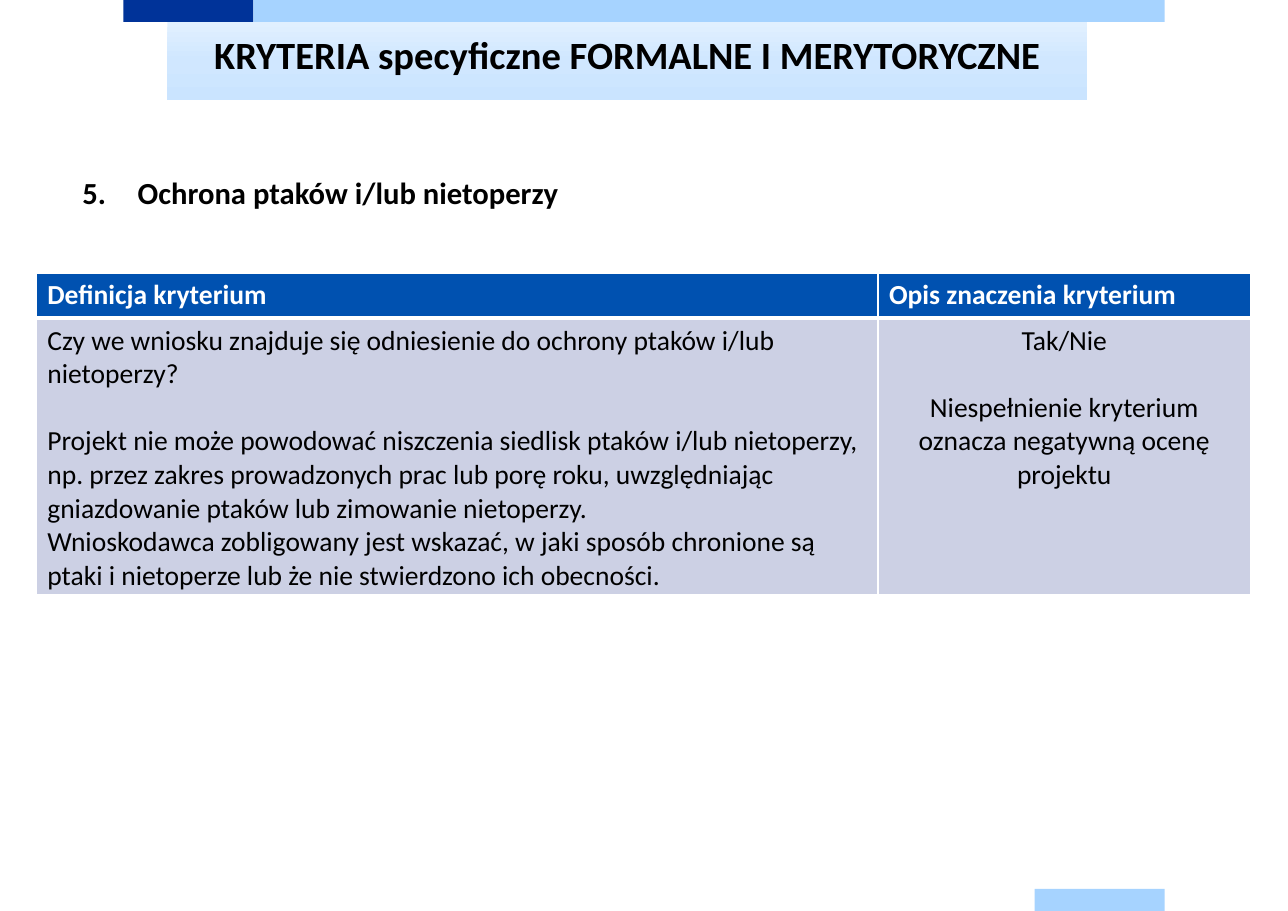
import copy

import pptx
import pptx.util
import pptx.dml.color
import pptx.enum.shapes
import pptx.enum.text
import pptx.oxml
import pptx.oxml.ns
from lxml import etree

Inches, Pt = pptx.util.Inches, pptx.util.Pt
qn = pptx.oxml.ns.qn
ALIGN = pptx.enum.text.PP_ALIGN
FONT = "Calibri"

BARS = [
    (1.12, 0, 1.18, 0.2, "003399"),
    (2.3, 0, 8.27, 0.2, "A6D3FF"),
    (9.39, 8.07, 1.18, 0.2, "A6D3FF"),
]
TITLE = "KRYTERIA specyficzne FORMALNE I MERYTORYCZNE"
TITLE_GRADIENT = [(0, "E1F0FF"), (0.5, "D0E7FF"), (1, "CAE4FF")]
HEADING = "Ochrona ptaków i/lub nietoperzy"
HEADING_NUMBER = 5

COLUMN_WIDTHS = [7.64, 3.38]
ROW_HEIGHTS = [0.41, 2.49]
ROW_STYLES = [
    {"fill": "0051B0", "color": "FFFFFF", "bold": True, "top": 1, "bottom": 3},
    {"fill": "CCD0E4", "color": "000000", "bold": False, "top": 3, "bottom": 1},
]
LINE_GAP = 22
# Each cell is a list of (text, space before in points)
TABLE = [
    [[("Definicja kryterium", 0)], [("Opis znaczenia kryterium", 0)]],
    [
        [
            ("Czy we wniosku znajduje się odniesienie do ochrony ptaków i/lub nietoperzy?", 0),
            ("Projekt nie może powodować niszczenia siedlisk ptaków i/lub nietoperzy, "
             "np. przez zakres prowadzonych prac lub porę roku, uwzględniając "
             "gniazdowanie ptaków lub zimowanie nietoperzy.", LINE_GAP),
            ("Wnioskodawca zobligowany jest wskazać, w jaki sposób chronione są "
             "ptaki i nietoperze lub że nie stwierdzono ich obecności.", 0),
        ],
        [
            ("Tak/Nie", 0),
            ("Niespełnienie kryterium oznacza negatywną ocenę projektu", LINE_GAP),
        ],
    ],
]


def rgb(value):
    return pptx.dml.color.RGBColor.from_string(value)


def style(paragraph, size, color, bold, align=ALIGN.LEFT):
    paragraph.alignment = align
    font = paragraph.font
    font.name, font.size, font.bold = FONT, Pt(size), bold
    font.color.rgb = rgb(color)


def add_rectangle(slide, left, top, width, height):
    shape = slide.shapes.add_shape(
        pptx.enum.shapes.MSO_SHAPE.RECTANGLE,
        Inches(left), Inches(top), Inches(width), Inches(height))
    shape.shadow.inherit = False
    shape.line.fill.background()
    return shape


def add_title(slide):
    shape = add_rectangle(slide, 1.52, 0.2, 8.35, 0.71)
    shape.fill.gradient()
    shape.fill.gradient_angle = 270
    stop_list = next(shape.element.iter(qn("a:gsLst")))
    stop_list.insert(1, copy.deepcopy(stop_list[0]))
    for stop, (position, color) in zip(shape.fill.gradient_stops, TITLE_GRADIENT):
        stop.position = position
        stop.color.rgb = rgb(color)
    frame = shape.text_frame
    frame.margin_left = frame.margin_right = frame.margin_top = frame.margin_bottom = 0
    frame.vertical_anchor = pptx.enum.text.MSO_ANCHOR.TOP
    paragraph = frame.paragraphs[0]
    paragraph.text = TITLE
    paragraph.line_spacing = Pt(36)
    style(paragraph, 25.2, "000000", True, ALIGN.CENTER)


def add_heading(slide):
    box = slide.shapes.add_textbox(Inches(0.65), Inches(1.53), Inches(10.39), Inches(1.08))
    box.text_frame.word_wrap = True
    paragraph = box.text_frame.paragraphs[0]
    paragraph.text = HEADING
    properties = paragraph._p.get_or_add_pPr()
    properties.set("marL", str(Inches(0.5)))
    properties.set("indent", str(-Inches(0.5)))
    etree.SubElement(properties, qn("a:buFont"), typeface="+mj-lt")
    etree.SubElement(properties, qn("a:buAutoNum"),
                     type="arabicPeriod", startAt=str(HEADING_NUMBER))
    style(paragraph, 20, "000000", True)


def set_borders(cell, top, bottom):
    properties = cell._tc.get_or_add_tcPr()
    widths = [("lnL", 1), ("lnR", 1), ("lnT", top), ("lnB", bottom)]
    for index, (tag, width) in enumerate(widths):
        line = etree.Element(qn("a:" + tag), w=str(Pt(width)))
        fill = etree.SubElement(line, qn("a:solidFill"))
        etree.SubElement(fill, qn("a:srgbClr"), val="FFFFFF")
        properties.insert(index, line)


def add_criteria_table(slide):
    table = slide.shapes.add_table(
        len(ROW_HEIGHTS), len(COLUMN_WIDTHS), Inches(0.33), Inches(2.48),
        Inches(sum(COLUMN_WIDTHS)), Inches(sum(ROW_HEIGHTS))).table
    for column, width in zip(table.columns, COLUMN_WIDTHS):
        column.width = Inches(width)
    for row_index, (row, look) in enumerate(zip(TABLE, ROW_STYLES)):
        table.rows[row_index].height = Inches(ROW_HEIGHTS[row_index])
        for column_index, content in enumerate(row):
            cell = table.cell(row_index, column_index)
            cell.fill.solid()
            cell.fill.fore_color.rgb = rgb(look["fill"])
            set_borders(cell, look["top"], look["bottom"])
            centred = row_index > 0 and column_index == 1
            cell.text = "\n".join(text for text, _ in content)
            for paragraph, (_, gap) in zip(cell.text_frame.paragraphs, content):
                if gap:
                    paragraph.space_before = Pt(gap)
                style(paragraph, 18, look["color"], look["bold"],
                      ALIGN.CENTER if centred else ALIGN.LEFT)


def main():
    presentation = pptx.Presentation()
    presentation.slide_width = Inches(11.69)
    presentation.slide_height = Inches(8.27)
    slide = presentation.slides.add_slide(presentation.slide_layouts[6])
    for *box, color in BARS:
        bar = add_rectangle(slide, *box)
        bar.fill.solid()
        bar.fill.fore_color.rgb = rgb(color)
    add_title(slide)
    add_heading(slide)
    add_criteria_table(slide)
    presentation.save("out.pptx")


if __name__ == "__main__":
    main()
